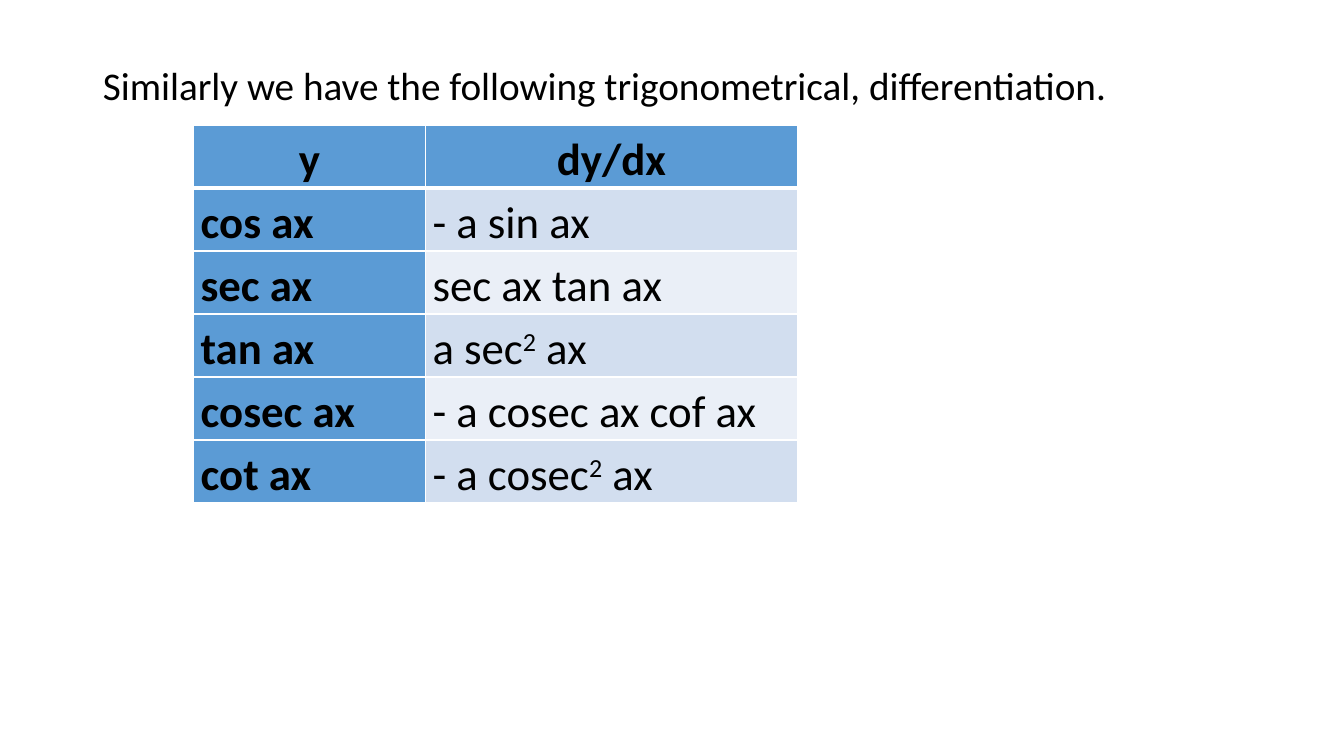
from lxml.etree import SubElement
from pptx import Presentation
from pptx.dml.color import RGBColor
from pptx.enum.text import MSO_ANCHOR, PP_ALIGN
from pptx.oxml.ns import qn
from pptx.util import Inches, Pt

BLACK = RGBColor(0x00, 0x00, 0x00)
BLUE = RGBColor(0x5B, 0x9B, 0xD5)
BANDS = [RGBColor(0xEA, 0xEF, 0xF7), RGBColor(0xD2, 0xDE, 0xEF)]
WHITE = "FFFFFF"

# Every second run of a cell is a superscript
ROWS = [
    (["y"], ["dy/dx"]),
    (["cos ax"], ["- a sin ax"]),
    (["sec ax"], ["sec ax tan ax"]),
    (["tan ax"], ["a sec", "2", " ax"]),
    (["cosec ax"], ["- a cosec ax cof ax"]),
    (["cot ax"], ["- a cosec", "2", " ax"]),
]
WIDTHS = [2.3, 3.69]


def add_run(para, text, size, bold=False):
    run = para.add_run()
    run.text = text
    font = run.font
    font.name, font.size, font.bold = "Calibri", Pt(size), bold
    font.color.rgb = BLACK
    return run


def add_edge(cell, side, width):
    line = SubElement(cell._tc.get_or_add_tcPr(), qn("a:ln" + side), w=str(Pt(width)))
    fill = SubElement(line, qn("a:solidFill"))
    SubElement(fill, qn("a:srgbClr"), val=WHITE)


deck = Presentation()
deck.slide_width, deck.slide_height = Inches(13.33), Inches(7.5)
slide = deck.slides.add_slide(deck.slide_layouts[1])

# Intro line in the body placeholder; the slide has no title
title = slide.shapes.title._element
title.getparent().remove(title)
body = slide.placeholders[1]
body.left, body.top = Inches(0.92), Inches(0.61)
body.width, body.height = Inches(11.5), Inches(6.15)
body.text_frame.vertical_anchor = MSO_ANCHOR.TOP
intro = body.text_frame.paragraphs[0]
intro.line_spacing = 0.9
intro.space_before = Pt(10)
props = intro._p.get_or_add_pPr()
props.set("marL", "0")
props.set("indent", "0")
SubElement(props, qn("a:buNone"))
add_run(intro, "Similarly we have the following trigonometrical, differentiation.", 28)

# Table of derivatives
frame = slide.shapes.add_table(
    len(ROWS), len(WIDTHS), Inches(1.92), Inches(1.24), Inches(sum(WIDTHS)), Inches(3.68))
table = frame.table
table.first_col = True
for col, width in zip(table.columns, WIDTHS):
    col.width = Inches(width)
for row in table.rows:
    row.height = Inches(0.5)
frame.height = Inches(3.68)

for r, row in enumerate(ROWS):
    for c, parts in enumerate(row):
        cell = table.cell(r, c)
        head = r == 0 or c == 0
        cell.margin_left = cell.margin_right = Inches(0.07)
        cell.margin_top = cell.margin_bottom = 0

        # White grid, thicker below the header
        for side in "LRTB":
            thick = (r, side) in [(0, "B"), (1, "T")]
            add_edge(cell, side, 3 if thick else 1)
        cell.fill.solid()
        cell.fill.fore_color.rgb = BLUE if head else BANDS[r % 2]

        para = cell.text_frame.paragraphs[0]
        para.alignment = PP_ALIGN.CENTER if r == 0 else PP_ALIGN.JUSTIFY
        para.line_spacing = 1.15
        for i, part in enumerate(parts):
            run = add_run(para, part, 32, head)
            if i % 2:
                run._r.get_or_add_rPr().set("baseline", "30000")

deck.save("out.pptx")
